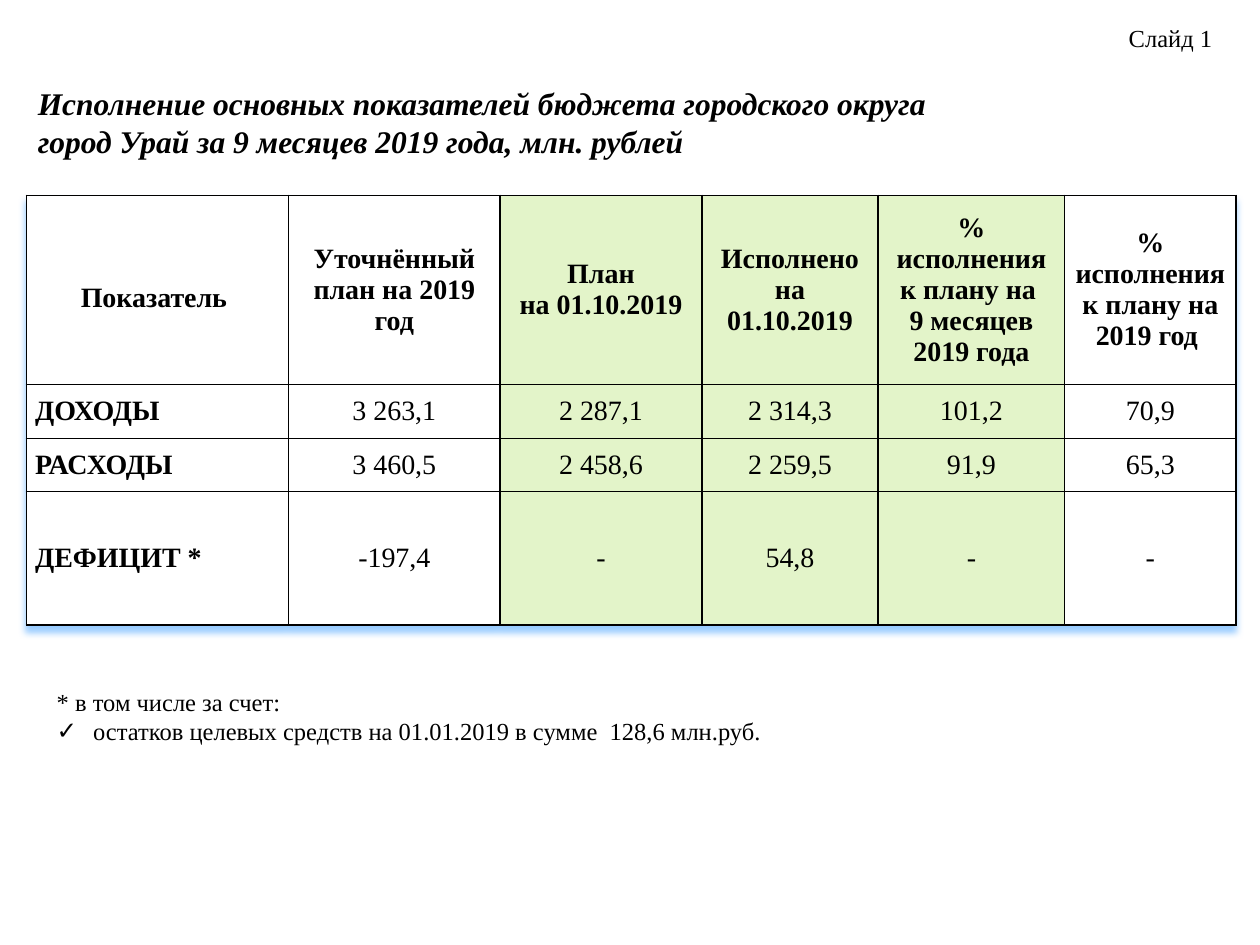
from lxml.etree import SubElement
from pptx import Presentation
from pptx.dml.color import RGBColor
from pptx.enum.text import MSO_ANCHOR as Anchor, MSO_AUTO_SIZE as AutoSize, PP_ALIGN as Align
from pptx.oxml import parse_xml
from pptx.oxml.ns import nsdecls, qn
from pptx.util import Inches, Pt

FONT = "Times New Roman"
BLACK, WHITE, GREEN = "000000", "FFFFFF", "E3F4C9"
COLUMN_WIDTHS = [2.08, 1.68, 1.6, 1.4, 1.48, 1.36]
ROW_HEIGHTS = [1.5, 0.43, 0.42, 1.06]
GREEN_COLUMNS = (2, 3, 4)
ROWS = [
    ["Показатель ", "Уточнённый план на 2019 год", "План\nна 01.10.2019",
     "Исполнено на 01.10.2019", "% исполнения к плану на \n9 месяцев 2019 года",
     "% исполнения к плану на 2019 год "],
    ["ДОХОДЫ", "3 263,1", "2 287,1", "2 314,3", "101,2", "70,9"],
    ["РАСХОДЫ", "3 460,5", "2 458,6", "2 259,5", "91,9", "65,3"],
    ["ДЕФИЦИТ *", "-197,4", "-", "54,8", "-", "-"],
]


def color(value):
    return RGBColor.from_string(value)


def place(shape, left, top, width, height):
    shape.left, shape.top = Inches(left), Inches(top)
    shape.width, shape.height = Inches(width), Inches(height)


def write(text_frame, text, size, align=Align.LEFT, bold=False, italic=False):
    text_frame.text = text
    for paragraph in text_frame.paragraphs:
        paragraph.alignment = align
        paragraph.space_before = Pt(0)
        for run in paragraph.runs:
            font = run.font
            font.name, font.size = FONT, Pt(size)
            font.bold, font.italic = bold, italic
            font.color.rgb = color(BLACK)


def set_bullet(paragraph, character=None, indent=0.0):
    properties = paragraph._p.get_or_add_pPr()
    properties.set("marL", str(Inches(indent)))
    properties.set("indent", str(-Inches(indent)))
    if character:
        SubElement(properties, qn("a:buChar"), char=character)
    else:
        SubElement(properties, qn("a:buNone"))


def set_borders(cell):
    properties = cell._tc.get_or_add_tcPr()
    for position, side in enumerate(("lnL", "lnR", "lnT", "lnB")):
        properties.insert(position, parse_xml(
            f'<a:{side} {nsdecls("a")} w="{Pt(1)}"><a:solidFill>'
            f'<a:srgbClr val="{BLACK}"/></a:solidFill></a:{side}>'))


def add_table_shadow(table):
    table._tbl.tblPr.insert(0, parse_xml(
        f'<a:effectLst {nsdecls("a")}><a:outerShdw blurRad="{Pt(4)}" dist="{Pt(4)}" '
        'dir="5400000" rotWithShape="0"><a:srgbClr val="99CCFF"/>'
        '</a:outerShdw></a:effectLst>'))


def add_title(slide):
    title = slide.shapes.title
    place(title, 0.2, 0.21, 7.4, 1.11)
    title.text_frame.vertical_anchor = Anchor.BOTTOM
    write(title.text_frame, "Исполнение основных показателей бюджета городского округа "
          "город Урай за 9 месяцев 2019 года, млн. рублей", 18, bold=True, italic=True)


def add_budget_table(slide):
    frame = slide.shapes.add_table(
        len(ROWS), len(COLUMN_WIDTHS), Inches(0.21), Inches(1.55),
        Inches(sum(COLUMN_WIDTHS)), Inches(sum(ROW_HEIGHTS)))
    table = frame.table
    add_table_shadow(table)
    for column, width in zip(table.columns, COLUMN_WIDTHS):
        column.width = Inches(width)
    for row, height in zip(table.rows, ROW_HEIGHTS):
        row.height = Inches(height)
    for row_index, values in enumerate(ROWS):
        for column_index, value in enumerate(values):
            cell = table.cell(row_index, column_index)
            is_header, is_label = row_index == 0, column_index == 0
            align = Align.LEFT if is_label and not is_header else Align.CENTER
            write(cell.text_frame, value, 16, align, bold=is_header or is_label)
            cell.vertical_anchor = Anchor.MIDDLE
            cell.margin_left = cell.margin_right = Inches(0.07)
            cell.margin_top = cell.margin_bottom = 0
            cell.fill.solid()
            cell.fill.fore_color.rgb = color(GREEN if column_index in GREEN_COLUMNS else WHITE)
            set_borders(cell)
    table.cell(0, 0).text_frame.paragraphs[0].line_spacing = 1.5


def add_footnote(slide):
    footnote = slide.placeholders[1]
    place(footnote, 0.35, 5.4, 9.13, 0.81)
    write(footnote.text_frame, "* в том числе за счет:\n"
          " остатков целевых средств на 01.01.2019 в сумме  128,6 млн.руб. ",
          14, Align.JUSTIFY)
    heading, item = footnote.text_frame.paragraphs
    set_bullet(heading)
    set_bullet(item, "✓", 0.24)


def add_slide_label(slide):
    label = slide.shapes.add_textbox(Inches(8.86), Inches(0.13), Inches(0.87), Inches(0.34))
    label.text_frame.word_wrap = False
    label.text_frame.auto_size = AutoSize.SHAPE_TO_FIT_TEXT
    write(label.text_frame, "Слайд 1", 14)


def main():
    presentation = Presentation()
    presentation.slide_width, presentation.slide_height = Inches(10), Inches(7.5)
    slide = presentation.slides.add_slide(presentation.slide_layouts[1])
    add_title(slide)
    add_budget_table(slide)
    add_footnote(slide)
    add_slide_label(slide)
    presentation.save("out.pptx")


if __name__ == "__main__":
    main()
